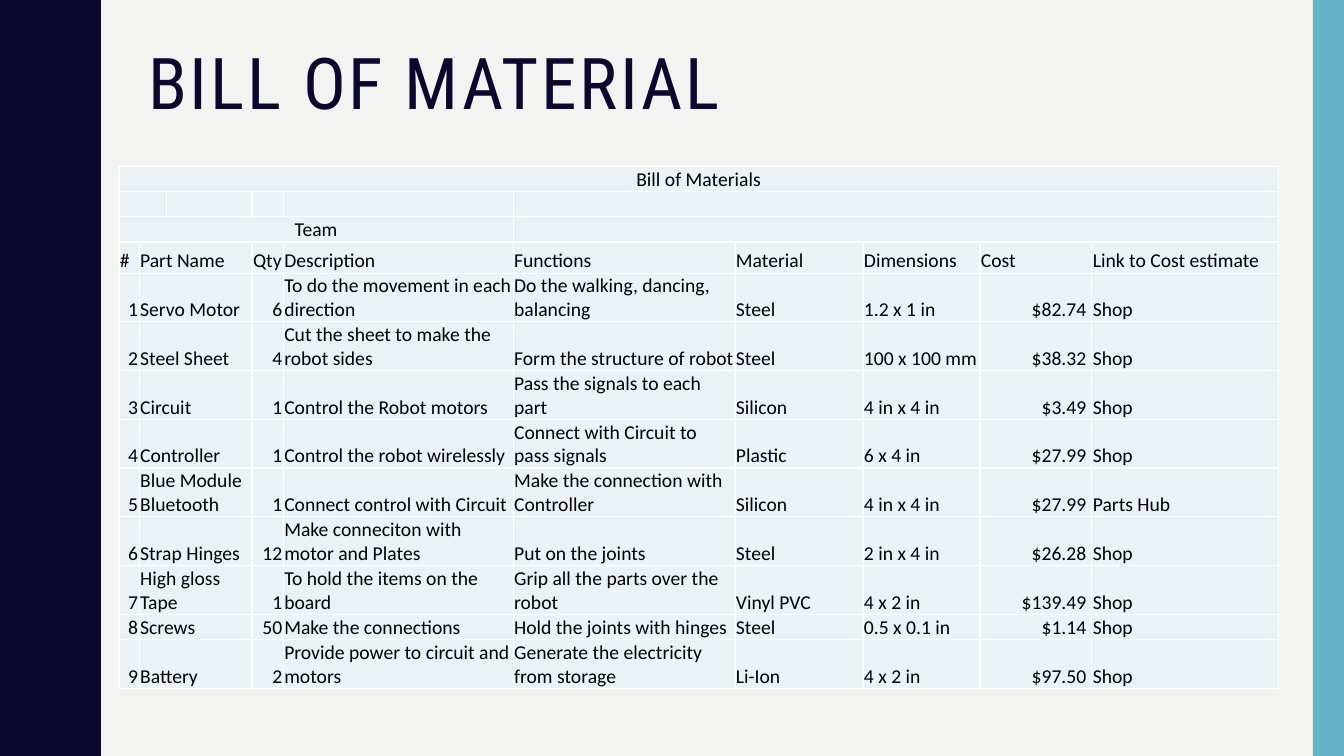
"""Build the bill of material slide."""
from lxml import etree
from pptx import Presentation
from pptx.dml.color import RGBColor
from pptx.enum.shapes import MSO_SHAPE
from pptx.enum.text import MSO_ANCHOR, MSO_AUTO_SIZE, PP_ALIGN
from pptx.oxml.ns import qn
from pptx.util import Inches, Pt

RECTANGLE = MSO_SHAPE.RECTANGLE
TOP, BOTTOM = MSO_ANCHOR.TOP, MSO_ANCHOR.BOTTOM
LEFT, CENTER, RIGHT = PP_ALIGN.LEFT, PP_ALIGN.CENTER, PP_ALIGN.RIGHT
NO_AUTOFIT = MSO_AUTO_SIZE.NONE

NAVY = RGBColor(0x0B, 0x08, 0x2E)
TEAL = RGBColor(0x62, 0xB4, 0xC6)
PAPER = RGBColor(0xF3, 0xF3, 0xF2)
PALE_BLUE = RGBColor(0xEA, 0xF2, 0xF5)
WHITE = RGBColor(0xFF, 0xFF, 0xFF)
BLACK = RGBColor(0, 0, 0)

SLIDE_WIDTH, SLIDE_HEIGHT = 13.33, 7.5
STRIPE_WIDTH = 0.31
WAVE_COUNT = 5
WAVE_HEIGHT = SLIDE_HEIGHT / WAVE_COUNT
HALF_WAVE = [
    (0.78, 0), (0.78, 0.07), (0.79, 0.14), (0.8, 0.2), (0.81, 0.25),
    (0.83, 0.29), (0.85, 0.33), (0.87, 0.38), (0.89, 0.42), (0.91, 0.46),
    (0.93, 0.5), (0.95, 0.55), (0.96, 0.61), (0.97, 0.68), (0.97, 0.75),
]

TITLE_BOX = (1.37, 0.42, 11.13, 1.63)
TITLE_FONT = {"name": "Roboto Condensed", "size": Pt(51)}
CELL_FONT = {"name": "Calibri", "size": Pt(14)}
CELL_FORMAT = {
    "margin_left": Inches(0.01), "margin_right": Inches(0.01),
    "margin_top": Inches(0.01), "margin_bottom": 0,
    "vertical_anchor": BOTTOM,
}

TABLE_LEFT, TABLE_TOP = 1.18, 1.65
COLUMN_WIDTHS = [0.2, 0.27, 0.85, 0.31, 2.28, 2.2, 1.27, 1.16, 1.11, 1.85]
LINE_ROW, HEADER_ROW, WRAPPED_ROW = 0.25, 0.31, 0.48
SCREWS_ROW = 11
HEADER_INDEX = 3
FIELD_COLUMNS = [0, 1, 3, 4, 5, 6, 7, 8, 9]
NUMBER_COLUMNS = {0, 3, 8}
TOP_MERGES = [(0, 0, 9), (1, 0, 1), (1, 5, 9), (2, 0, 4), (2, 5, 9)]

HEADERS = ("#", "Part Name", "Qty", "Description", "Functions", "Material",
           "Dimensions", "Cost", "Link to Cost estimate")
PARTS = [
    ("1", "Servo Motor", "6", "To do the movement in each direction",
     "Do the walking, dancing, balancing", "Steel", "1.2 x 1 in", "$82.74 ", "Shop"),
    ("2", "Steel Sheet", "4", "Cut the sheet to make the robot sides",
     "Form the structure of robot", "Steel", "100 x 100 mm", "$38.32 ", "Shop"),
    ("3", "Circuit", "1", "Control the Robot motors",
     "Pass the signals to each part", "Silicon", "4 in x 4 in", "$3.49 ", "Shop"),
    ("4", "Controller", "1", "Control the robot wirelessly",
     "Connect with Circuit to pass signals", "Plastic", "6 x 4 in", "$27.99 ", "Shop"),
    ("5", "Blue Module Bluetooth", "1", "Connect control with Circuit",
     "Make the connection with Controller", "Silicon", "4 in x 4 in", "$27.99 ", "Parts Hub"),
    ("6", "Strap Hinges", "12", "Make conneciton with motor and Plates",
     "Put on the joints", "Steel", "2 in x 4 in", "$26.28 ", "Shop"),
    ("7", "High gloss Tape", "1", "To hold the items on the board",
     "Grip all the parts over the robot", "Vinyl PVC", "4 x 2 in", "$139.49 ", "Shop"),
    ("8", "Screws", "50", "Make the connections",
     "Hold the joints with hinges", "Steel", "0.5 x 0.1 in", "$1.14 ", "Shop"),
    ("9", "Battery", "2", "Provide power to circuit and motors",
     "Generate the electricity from storage", "Li-Ion", "4 x 2 in", "$97.50 ", "Shop"),
]


def set_attributes(target, values):
    """Set each named attribute on the target."""
    for name, value in values.items():
        setattr(target, name, value)


def paint(shape, color):
    """Give a shape a plain fill without line or shadow."""
    shape.fill.solid()
    shape.fill.fore_color.rgb = color
    shape.line.fill.background()
    shape.shadow.inherit = False


def add_wavy_edge(slide):
    """Draw the left band with its repeated wave."""
    wave = HALF_WAVE + [(x, WAVE_HEIGHT - y) for x, y in reversed(HALF_WAVE[:-1])]
    points = [(x, y + number * WAVE_HEIGHT)
              for number in range(WAVE_COUNT) for x, y in wave]
    builder = slide.shapes.build_freeform(0, 0, scale=Inches(1))
    builder.add_line_segments(points + [(0, SLIDE_HEIGHT)], close=True)
    paint(builder.convert_to_shape(), NAVY)


def add_stripe(slide):
    """Draw the stripe along the right edge."""
    stripe = slide.shapes.add_shape(
        RECTANGLE, Inches(SLIDE_WIDTH - STRIPE_WIDTH), 0,
        Inches(STRIPE_WIDTH), Inches(SLIDE_HEIGHT))
    paint(stripe, TEAL)


def format_title(slide):
    """Place and style the title placeholder."""
    title = slide.shapes.title
    sides = ("left", "top", "width", "height")
    set_attributes(title, dict(zip(sides, map(Inches, TITLE_BOX))))
    set_attributes(title.text_frame, {
        "text": "BILL OF MATERIAL", "vertical_anchor": TOP,
        "auto_size": NO_AUTOFIT, "word_wrap": True})
    paragraph = title.text_frame.paragraphs[0]
    set_attributes(paragraph, {"alignment": LEFT, "line_spacing": 0.9})
    run = paragraph.runs[0]
    set_attributes(run.font, TITLE_FONT)
    run.font.color.rgb = NAVY
    run.font._element.set("spc", "200")


def style_cell(cell):
    """Give a cell its margins, fill, white borders and empty text size."""
    set_attributes(cell, CELL_FORMAT)
    cell.fill.solid()
    cell.fill.fore_color.rgb = PALE_BLUE
    properties = cell._tc.get_or_add_tcPr()
    for position, side in enumerate(("lnL", "lnR", "lnT", "lnB")):
        border = etree.Element(qn(f"a:{side}"), w=str(Pt(1)))
        fill = etree.SubElement(border, qn("a:solidFill"))
        etree.SubElement(fill, qn("a:srgbClr"), val=str(WHITE))
        properties.insert(position, border)
    paragraph = cell.text_frame.paragraphs[0]._p
    etree.SubElement(paragraph, qn("a:endParaRPr"), sz="1400")


def write_cell(cell, text, alignment):
    """Write aligned text in a cell."""
    paragraph = cell.text_frame.paragraphs[0]
    paragraph.alignment = alignment
    run = paragraph.add_run()
    run.text = text
    set_attributes(run.font, CELL_FONT)
    run.font.color.rgb = BLACK


def add_parts_table(slide):
    """Add the table with its top rows, header and parts."""
    heights = [LINE_ROW] * HEADER_INDEX + [HEADER_ROW] + [WRAPPED_ROW] * len(PARTS)
    heights[SCREWS_ROW] = LINE_ROW
    table = slide.shapes.add_table(
        len(heights), len(COLUMN_WIDTHS), Inches(TABLE_LEFT), Inches(TABLE_TOP),
        Inches(sum(COLUMN_WIDTHS)), Inches(sum(heights))).table
    set_attributes(table, {"first_row": False, "horz_banding": False})
    for column, width in zip(table.columns, COLUMN_WIDTHS):
        column.width = Inches(width)
    for row, height in zip(table.rows, heights):
        row.height = Inches(height)
    for cell in table.iter_cells():
        style_cell(cell)
    name_merges = [(row, 1, 2) for row in range(HEADER_INDEX, len(heights))]
    for row, first, last in TOP_MERGES + name_merges:
        table.cell(row, first).merge(table.cell(row, last))
    write_cell(table.cell(0, 0), "Bill of Materials", CENTER)
    write_cell(table.cell(2, 0), "Team", CENTER)
    for row, fields in enumerate([HEADERS] + PARTS, HEADER_INDEX):
        for column, text in zip(FIELD_COLUMNS, fields):
            is_number = row > HEADER_INDEX and column in NUMBER_COLUMNS
            write_cell(table.cell(row, column), text, RIGHT if is_number else LEFT)


def main():
    """Create the presentation and save it."""
    presentation = Presentation()
    presentation.slide_width = Inches(SLIDE_WIDTH)
    presentation.slide_height = Inches(SLIDE_HEIGHT)
    slide = presentation.slides.add_slide(presentation.slide_layouts[5])
    slide.background.fill.solid()
    slide.background.fill.fore_color.rgb = PAPER
    add_wavy_edge(slide)
    add_stripe(slide)
    format_title(slide)
    add_parts_table(slide)
    presentation.save("out.pptx")


if __name__ == "__main__":
    main()
